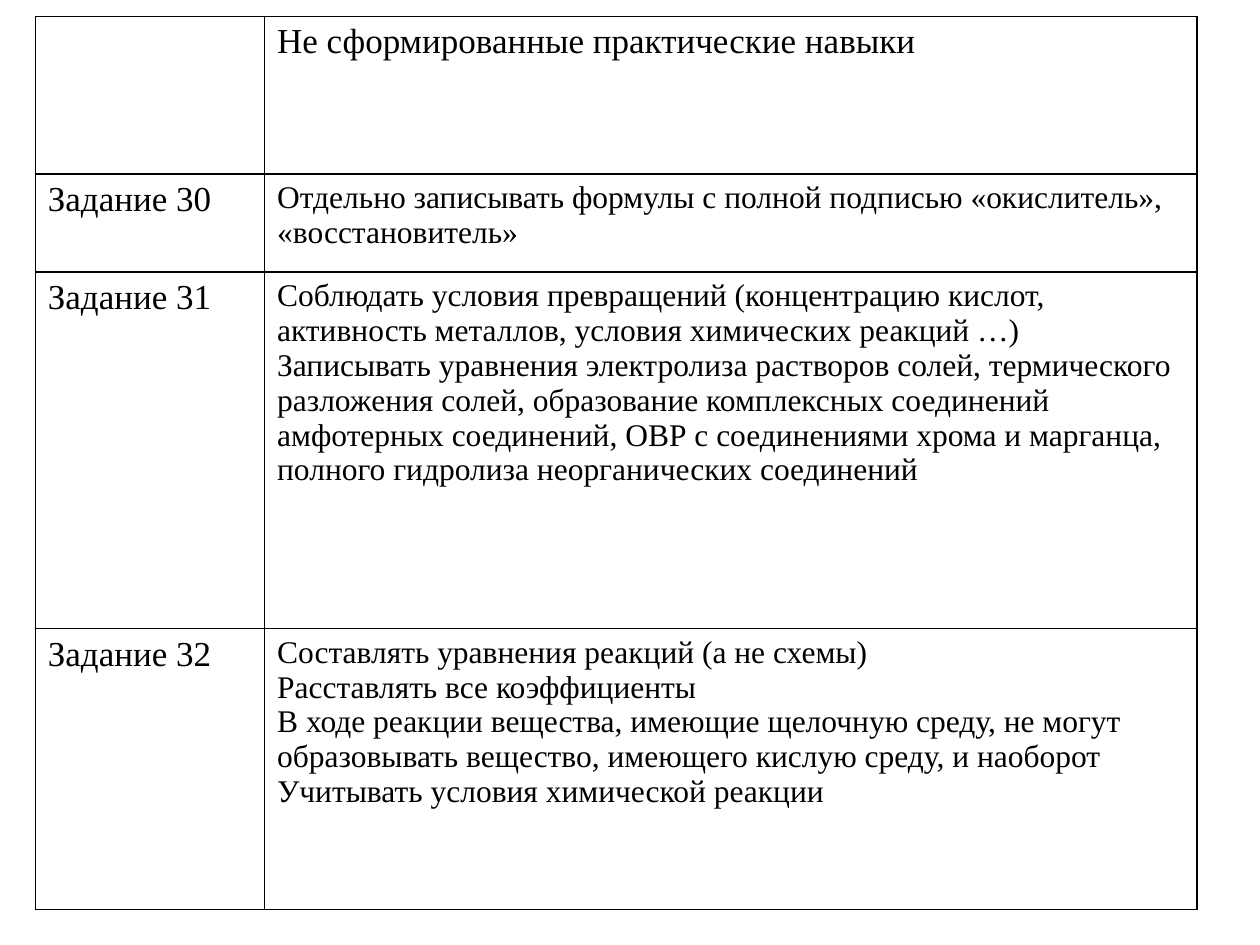
import pptx
import pptx.util
import pptx.dml.color
import pptx.oxml
import pptx.oxml.ns

INCH = pptx.util.Inches
FONT = "Times New Roman"
INK = "000000"
COLS = [1.82, 7.4]
ROWS = [1.25, 0.78, 2.83, 2.23]

# Each row: task name, then the paragraphs of advice
TASKS = [
    ("", ["Не сформированные практические навыки"]),
    ("Задание 30", [
        "Отдельно записывать формулы с полной подписью «окислитель», «восстановитель»",
    ]),
    ("Задание 31", [
        "Соблюдать условия превращений (концентрацию кислот, активность металлов, "
        "условия химических реакций …)",
        "Записывать уравнения электролиза растворов солей, термического разложения "
        "солей, образование комплексных соединений амфотерных соединений, ОВР с "
        "соединениями хрома и марганца, полного гидролиза неорганических соединений",
    ]),
    ("Задание 32", [
        "Составлять уравнения реакций (а не схемы)",
        "Расставлять все коэффициенты",
        "В ходе реакции вещества, имеющие щелочную среду, не могут образовывать "
        "вещество, имеющего кислую среду, и наоборот",
        "Учитывать условия химической реакции",
    ]),
]


def color(code):
    return pptx.dml.color.RGBColor.from_string(code)


def border(cell, code=INK, width=1):
    """Draw all four sides; lines must stand before the fill."""
    props = cell._tc.get_or_add_tcPr()
    for spot, side in enumerate(("lnL", "lnR", "lnT", "lnB")):
        line = pptx.oxml.parse_xml(
            f'<a:{side} {pptx.oxml.ns.nsdecls("a")} w="{pptx.util.Pt(width)}">'
            f'<a:solidFill><a:srgbClr val="{code}"/></a:solidFill></a:{side}>')
        props.insert(spot, line)


def write(cell, lines, size):
    cell.text = "\n".join(lines)
    for para in cell.text_frame.paragraphs:
        para.font.name = FONT
        para.font.size = pptx.util.Pt(size)
        para.font.bold = False
        para.font.color.rgb = color(INK)


def add_grid(slide, left, top):
    frame = slide.shapes.add_table(
        len(ROWS), len(COLS), INCH(left), INCH(top),
        INCH(sum(COLS)), INCH(sum(ROWS)))
    grid = frame.table
    grid.first_row = grid.horz_banding = False
    for col, width in zip(grid.columns, COLS):
        col.width = INCH(width)
    for row, height in zip(grid.rows, ROWS):
        row.height = INCH(height)
    for cell in grid.iter_cells():
        cell.fill.background()
        border(cell)
    return grid


def main():
    deck = pptx.Presentation()
    deck.slide_width, deck.slide_height = INCH(10), INCH(7.5)
    slide = deck.slides.add_slide(deck.slide_layouts[6])

    # Heading row and task names are larger than the advice
    grid = add_grid(slide, 0.28, 0.13)
    for row, (name, advice) in enumerate(TASKS):
        write(grid.cell(row, 0), [name], 20)
        write(grid.cell(row, 1), advice, 18 if row else 20)

    deck.save("out.pptx")


if __name__ == "__main__":
    main()
